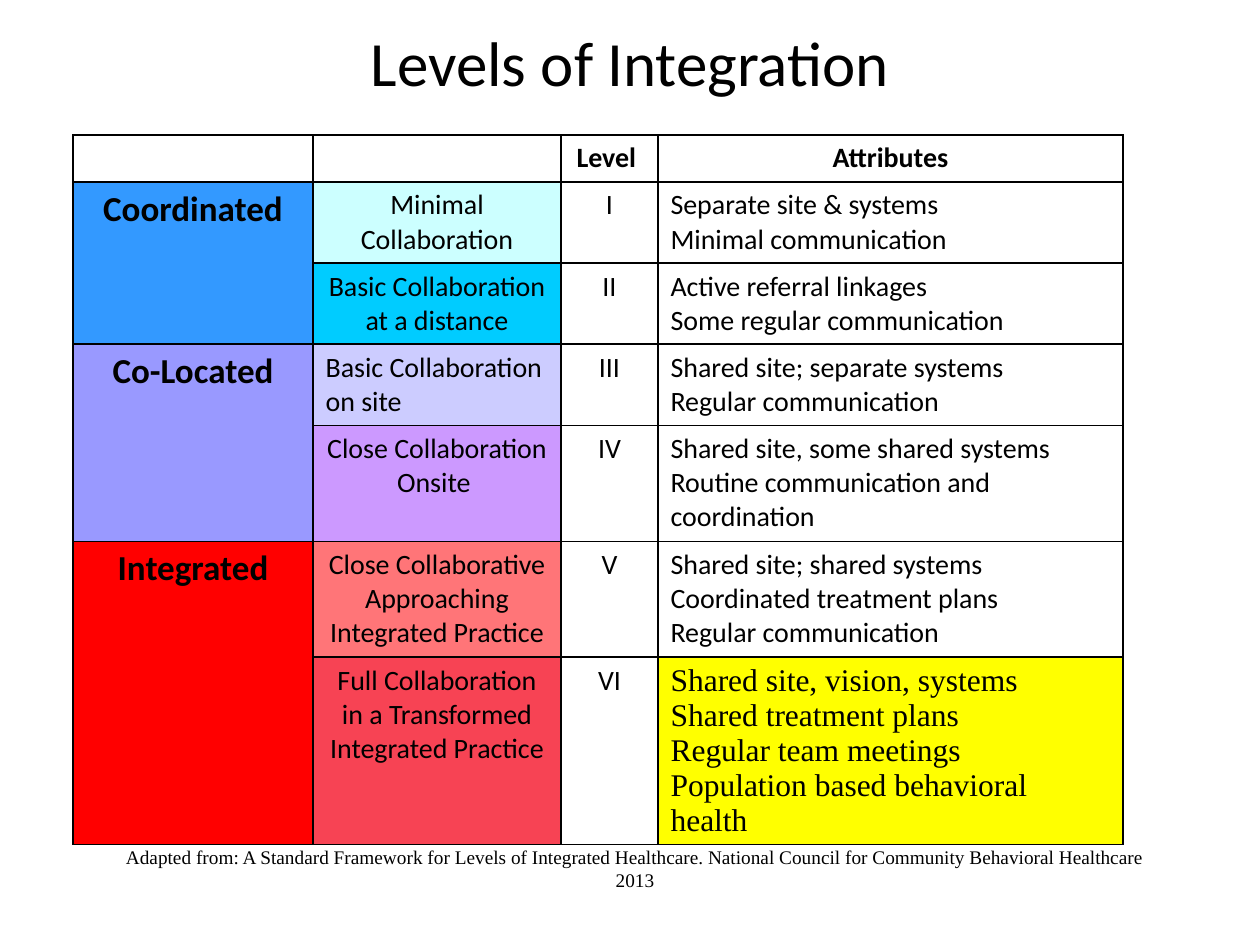
from lxml import etree
from pptx import Presentation
from pptx.dml.color import RGBColor
from pptx.enum.text import MSO_ANCHOR, PP_ALIGN
from pptx.oxml.ns import qn
from pptx.util import Emu, Pt

LEFT, CENTER = PP_ALIGN.LEFT, PP_ALIGN.CENTER
MIDDLE = MSO_ANCHOR.MIDDLE
PX = 914400 // 126

BLACK = RGBColor(0x00, 0x00, 0x00)
BLUE = RGBColor(0x33, 0x99, 0xFF)
PALE_CYAN = RGBColor(0xCC, 0xFF, 0xFF)
CYAN = RGBColor(0x00, 0xCC, 0xFF)
PERIWINKLE = RGBColor(0x99, 0x99, 0xFF)
LAVENDER = RGBColor(0xCC, 0xCC, 0xFF)
PURPLE = RGBColor(0xCC, 0x99, 0xFF)
RED = RGBColor(0xFF, 0x00, 0x00)
SALMON = RGBColor(0xFF, 0x75, 0x78)
CRIMSON = RGBColor(0xF7, 0x43, 0x54)
YELLOW = RGBColor(0xFF, 0xFF, 0x00)

SANS, SERIF = "Calibri", "Times New Roman"

TITLE = "Levels of Integration"
CREDIT = ("Adapted from: A Standard Framework for Levels of Integrated Healthcare. "
          "National Council for Community Behavioral Healthcare 2013")
HEADERS = ["", "", "Level ", "Attributes"]
# Each category spans two levels.
CATEGORIES = [("Coordinated", BLUE), ("Co-Located", PERIWINKLE), ("Integrated", RED)]
# Collaboration, its fill and alignment, level, attributes
LEVELS = [
    ("Minimal Collaboration", PALE_CYAN, CENTER, "I",
     "Separate site & systems\nMinimal communication"),
    ("Basic Collaboration at a distance", CYAN, CENTER, "II",
     "Active referral linkages\nSome regular communication"),
    ("Basic Collaboration\non site", LAVENDER, LEFT, "III",
     "Shared site; separate systems\nRegular communication"),
    ("Close Collaboration Onsite ", PURPLE, CENTER, "IV",
     "Shared site, some shared systems\nRoutine communication and coordination"),
    ("Close Collaborative Approaching Integrated Practice", SALMON, CENTER, "V",
     "Shared site; shared systems\nCoordinated treatment plans\nRegular communication"),
    ("Full Collaboration in a Transformed Integrated Practice", CRIMSON, CENTER, "VI",
     "Shared site, vision, systems\nShared treatment plans\nRegular team meetings\n"
     "Population based behavioral health"),
]
TABLE_LEFT, TABLE_TOP = 73, 135
COLUMN_WIDTHS = [240, 248, 97, 465]
ROW_HEIGHTS = [47, 81, 81, 81, 116, 116, 186]


def px(length):
    return Emu(length * PX)


def write(frame, text, size=16, font=SANS, bold=False, align=CENTER):
    """Write each line of text as one formatted paragraph."""
    frame.word_wrap = True
    for index, line in enumerate(text.split("\n")):
        paragraph = frame.add_paragraph() if index else frame.paragraphs[0]
        paragraph.alignment = align
        if not line:
            # Keeps an empty cell from growing its row
            etree.SubElement(paragraph._p, qn("a:endParaRPr"), sz=str(size * 100))
            continue
        run = paragraph.add_run()
        run.text = line
        run.font.size = Pt(size)
        run.font.name = font
        run.font.bold = bold
        run.font.color.rgb = BLACK


def add_text(slide, text, left, top, width, height, **text_format):
    shape = slide.shapes.add_textbox(px(left), px(top), px(width), px(height))
    shape.text_frame.vertical_anchor = MIDDLE
    write(shape.text_frame, text, **text_format)


def add_borders(cell):
    properties = cell._tc.get_or_add_tcPr()
    for position, side in enumerate(("lnL", "lnR", "lnT", "lnB")):
        line = etree.Element(qn(f"a:{side}"), w=str(Pt(1)))
        fill = etree.SubElement(line, qn("a:solidFill"))
        etree.SubElement(fill, qn("a:srgbClr"), val=str(BLACK))
        properties.insert(position, line)


def fill_cell(cell, text, fill=None, **text_format):
    write(cell.text_frame, text, **text_format)
    if fill is not None:
        cell.fill.solid()
        cell.fill.fore_color.rgb = fill


def add_levels_table(slide):
    table = slide.shapes.add_table(
        len(ROW_HEIGHTS), len(COLUMN_WIDTHS), px(TABLE_LEFT), px(TABLE_TOP),
        px(sum(COLUMN_WIDTHS)), px(sum(ROW_HEIGHTS))).table
    table.first_row = table.horz_banding = False
    for column, width in zip(table.columns, COLUMN_WIDTHS):
        column.width = px(width)
    for row, height in zip(table.rows, ROW_HEIGHTS):
        row.height = px(height)
    for cell in table.iter_cells():
        cell.fill.background()
        add_borders(cell)

    for column, header in enumerate(HEADERS):
        fill_cell(table.cell(0, column), header, bold=True)
    for index, (category, fill) in enumerate(CATEGORIES):
        first = 1 + 2 * index
        table.cell(first, 0).merge(table.cell(first + 1, 0))
        fill_cell(table.cell(first, 0), category, fill, size=20, bold=True)
    for row, (name, fill, align, level, attributes) in enumerate(LEVELS, start=1):
        fill_cell(table.cell(row, 1), name, fill, align=align)
        fill_cell(table.cell(row, 2), level)
        highlight = {}
        if row == len(LEVELS):
            highlight = {"fill": YELLOW, "size": 18, "font": SERIF}
        fill_cell(table.cell(row, 3), attributes, align=LEFT, **highlight)


def main():
    presentation = Presentation()
    presentation.slide_width, presentation.slide_height = px(1260), px(945)
    slide = presentation.slides.add_slide(presentation.slide_layouts[6])
    add_levels_table(slide)
    add_text(slide, TITLE, 147, 16, 966, 90, size=36)
    add_text(slide, CREDIT, 94, 851, 1082, 35, size=11, font=SERIF)
    presentation.save("out.pptx")


if __name__ == "__main__":
    main()
